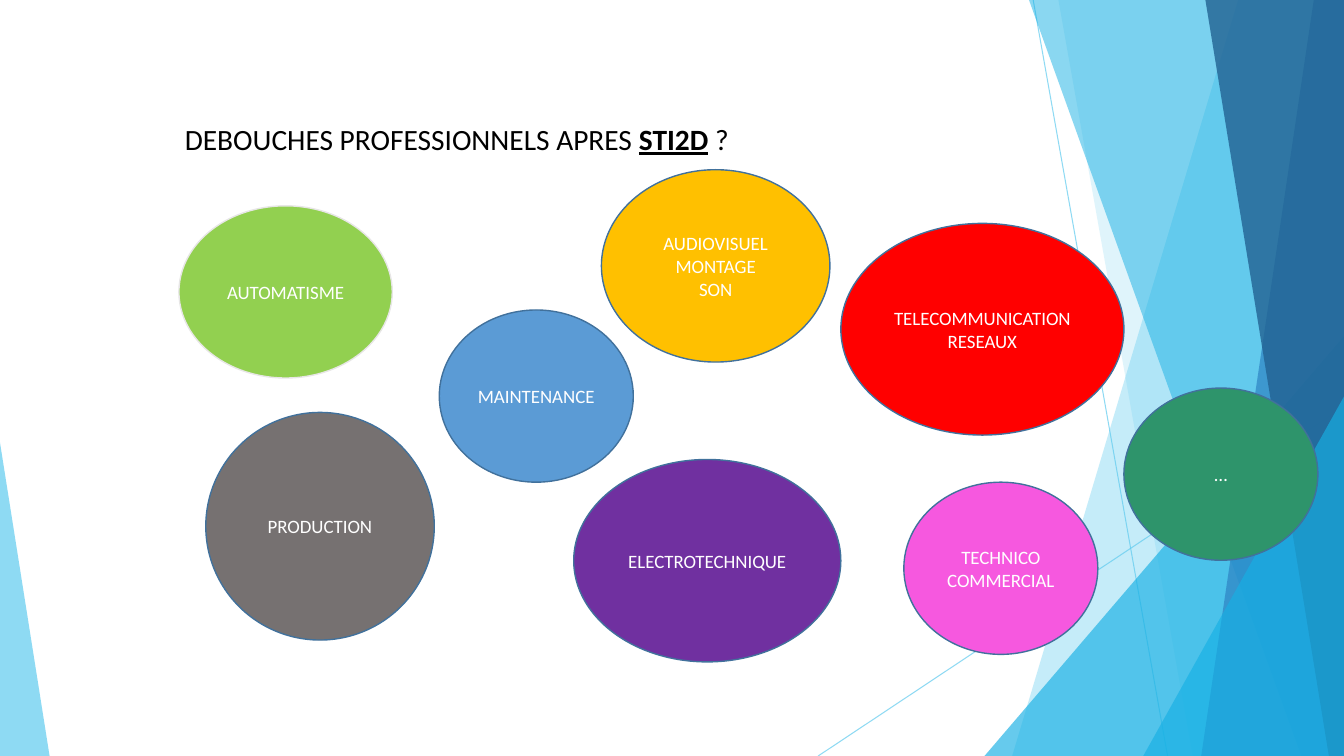
from dataclasses import dataclass

from lxml.etree import SubElement
from pptx import Presentation
from pptx.dml.color import RGBColor
from pptx.enum.shapes import MSO_CONNECTOR, MSO_SHAPE
from pptx.enum.text import MSO_ANCHOR, PP_ALIGN
from pptx.oxml.ns import qn
from pptx.util import Inches, Pt

COLUMNS, ROWS = 160, 90
FONT = "Calibri"
COLORS = {
    "black": "000000", "white": "FFFFFF", "outline": "41719C", "pale": "E7E6E6",
    "sky": "5FCBEF", "cyan": "17B0E4", "blue": "2E83C3", "navy": "226292",
    "lime": "92D050", "red": "FF0000", "grey": "767171", "purple": "7030A0",
    "amber": "FFC000", "steel": "5B9BD5", "pink": "F658DF", "green": "2E946B",
}
CAREERS = [
    (["AUTOMATISME"], (21.3, 24.5, 25.4, 20.5), "lime", "pale"),
    (["TELECOMMUNICATION", "RESEAUX"], (100.1, 26.6, 33.7, 25.2), "red", "outline"),
    (["PRODUCTION"], (24.5, 49.1, 27.2, 27.1), "grey", "outline"),
    (["ELECTROTECHNIQUE"], (68.3, 54.7, 31.8, 24.1), "purple", "outline"),
    (["AUDIOVISUEL", "MONTAGE", "SON"], (71.6, 20.2, 27.2, 22.9), "amber", "outline"),
    (["MAINTENANCE"], (52.3, 36.9, 23.1, 20.5), "steel", "outline"),
    (["TECHNICO", "COMMERCIAL"], (107.6, 57.4, 23.1, 20.5), "pink", "outline"),
    (["…"], (133.8, 46.2, 23.1, 20.5), "green", "outline"),
]


@dataclass
class Box:
    """A region divided into COLUMNS by ROWS cells."""
    left: int
    top: int
    width: int
    height: int

    def point(self, column, row):
        """Return the position of a grid crossing."""
        return (self.left + round(self.width * column / COLUMNS),
                self.top + round(self.height * row / ROWS))

    def block(self, column, row, columns, rows):
        """Return left, top, width and height of a block of cells."""
        left, top = self.point(column, row)
        right, bottom = self.point(column + columns, row + rows)
        return left, top, right - left, bottom - top


def rgb(name):
    """Return the named colour."""
    return RGBColor.from_string(COLORS[name])


def set_opacity(properties, opacity):
    """Make the solid fill inside a properties element translucent."""
    tint = properties.find(f"{qn('a:solidFill')}/{qn('a:srgbClr')}")
    SubElement(tint, qn("a:alpha"), val=str(opacity * 1000))


def add_ray(slide, box, start, end):
    """Draw a thin translucent line between two grid crossings."""
    ray = slide.shapes.add_connector(
        MSO_CONNECTOR.STRAIGHT, *box.point(*start), *box.point(*end))
    ray.line.width = Pt(0.75)
    ray.line.color.rgb = rgb("sky")
    properties = ray._element.spPr
    set_opacity(properties.find(qn("a:ln")), 70)
    SubElement(properties, qn("a:effectLst"))


def finish_facet(facet, color, opacity):
    """Make a facet flat, translucent and without outline."""
    facet.fill.solid()
    facet.fill.fore_color.rgb = rgb(color)
    set_opacity(facet._element.spPr, opacity)
    facet.line.fill.background()
    facet.shadow.inherit = False


def add_band(slide, box, top_column, bottom_column, color, opacity):
    """Draw a full-height facet reaching the right edge."""
    outline = slide.shapes.build_freeform(*box.point(top_column, 0))
    corners = [(COLUMNS, 0), (COLUMNS, ROWS), (bottom_column, ROWS)]
    outline.add_line_segments([box.point(*corner) for corner in corners], close=True)
    finish_facet(outline.convert_to_shape(), color, opacity)


def add_corner(slide, box, column, row, columns, apex, color, opacity):
    """Draw a triangle standing on the bottom edge."""
    corner = slide.shapes.add_shape(
        MSO_SHAPE.ISOSCELES_TRIANGLE, *box.block(column, row, columns, ROWS - row))
    corner.adjustments[0] = apex
    finish_facet(corner, color, opacity)


def add_backdrop(slide, box):
    """Build the layered blue facets from back to front."""
    add_ray(slide, box, (123, 0), (139, ROWS))
    add_ray(slide, box, (COLUMNS, 48.4), (97.4, ROWS))
    add_band(slide, box, 147.4, 120.5, "sky", 36)
    add_band(slide, box, 126, 142, "sky", 20)
    add_corner(slide, box, 117.2, 40, 42.8, 1, "cyan", 66)
    add_band(slide, box, 122.5, 154.9, "cyan", 50)
    add_band(slide, box, 156.4, 143, "blue", 70)
    add_band(slide, box, 143.5, 158.2, "navy", 80)
    add_corner(slide, box, 136.1, 47.2, 23.9, 1, "cyan", 66)
    add_corner(slide, box, 0, 52.7, 5.9, 0, "sky", 70)


def add_heading(slide, box):
    """Place the question in the title placeholder."""
    heading = slide.shapes.title
    heading.left, heading.top, heading.width, heading.height = box.block(20.8, 13.8, 94.9, 5.4)
    frame = heading.text_frame
    frame.vertical_anchor = MSO_ANCHOR.TOP
    question = frame.paragraphs[0]
    question.alignment = PP_ALIGN.LEFT
    question.line_spacing = 1
    question.font.name, question.font.size = FONT, Pt(21)
    question.font.color.rgb = rgb("black")
    for text, stressed in [("DEBOUCHES PROFESSIONNELS APRES ", False),
                           ("STI2D", True), (" ?", False)]:
        run = question.add_run()
        run.text = text
        run.font.bold = run.font.underline = stressed


def add_career(slide, box, lines, cells, color, outline):
    """Draw one career field as a labelled ellipse."""
    career = slide.shapes.add_shape(MSO_SHAPE.OVAL, *box.block(*cells))
    career.shadow.inherit = False
    career.fill.solid()
    career.fill.fore_color.rgb = rgb(color)
    career.line.color.rgb = rgb(outline)
    career.line.width = Pt(1)
    frame = career.text_frame
    frame.word_wrap = False
    frame.vertical_anchor = MSO_ANCHOR.MIDDLE
    frame.text = "\n".join(lines)
    for paragraph in frame.paragraphs:
        paragraph.alignment = PP_ALIGN.CENTER
        paragraph.font.name, paragraph.font.size = FONT, Pt(13.5)
        paragraph.font.color.rgb = rgb("white")


def main():
    """Build and save the careers slide."""
    deck = Presentation()
    deck.slide_width, deck.slide_height = Inches(13.33), Inches(7.5)
    slide = deck.slides.add_slide(deck.slide_layouts.get_by_name("Title Only"))
    page = Box(0, 0, deck.slide_width, deck.slide_height)
    add_backdrop(slide, page)
    add_heading(slide, page)
    for career in CAREERS:
        add_career(slide, page, *career)
    deck.save("out.pptx")


if __name__ == "__main__":
    main()
